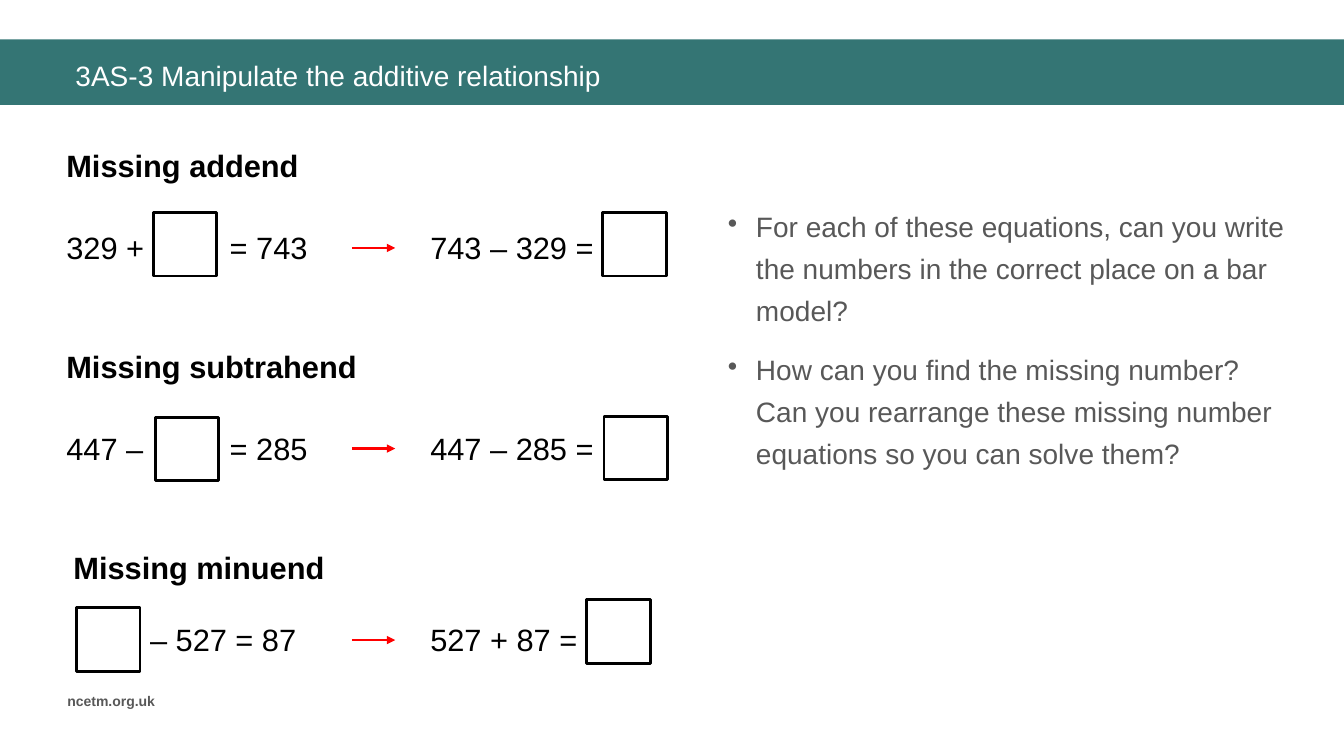
import pptx
import pptx.util
import pptx.dml.color
import pptx.enum.shapes
import pptx.enum.text
import pptx.oxml.ns
import lxml.etree

Inches = pptx.util.Inches
Pt = pptx.util.Pt
SHAPE = pptx.enum.shapes.MSO_SHAPE
LINE = pptx.enum.shapes.MSO_CONNECTOR
ANCHOR = pptx.enum.text.MSO_ANCHOR
qn = pptx.oxml.ns.qn


def color(part, code):
    """Give a fill, line or font one solid colour."""
    fill = part if hasattr(part, "solid") else part.fill
    fill.solid()
    fill.fore_color.rgb = pptx.dml.color.RGBColor.from_string(code)


def write(spot, lines, code, form, tab=None, bullet=None):
    """Add a text box at spot, one paragraph per line."""
    frame = slide.shapes.add_textbox(*map(Inches, spot)).text_frame
    frame.word_wrap = True
    for row, line in enumerate(lines):
        para = frame.paragraphs[0] if row == 0 else frame.add_paragraph()
        para.text = line
        props = para._p.get_or_add_pPr()
        if bullet:
            props.set("marL", str(Inches(0.28)))
            props.set("indent", str(Inches(-0.28)))
            lxml.etree.SubElement(props, qn("a:buChar")).set("char", bullet)
        if tab:
            stops = lxml.etree.SubElement(props, qn("a:tabLst"))
            stop = lxml.etree.SubElement(stops, qn("a:tab"))
            stop.set("pos", str(Inches(tab)))
            stop.set("algn", "l")
        for name, value in form.items():
            setattr(para.font, name, value)
        color(para.font.fill, code)
    return frame


deck = pptx.Presentation()
deck.slide_width = Inches(13.33)
deck.slide_height = Inches(7.5)
slide = deck.slides.add_slide(deck.slide_layouts[6])

BLACK, WHITE, GREY, TEAL, RED = "000000", "FFFFFF", "585858", "347574", "FF0000"
small = {"name": "Arial", "size": Pt(10), "bold": True}
body = {"name": "Arial", "size": Pt(20)}
sums = {"name": "Arial", "size": Pt(22)}
head = {**sums, "bold": True}

# Banner, title and footer
band = slide.shapes.add_shape(
    SHAPE.RECTANGLE, 0, Inches(0.39), deck.slide_width, Inches(0.65))
band.shadow.inherit = False
color(band.fill, TEAL)
band.line.fill.background()
title = write((0.65, 0.51, 12.32, 0.47),
              ["3AS-3 Manipulate the additive relationship"], WHITE, body)
title.vertical_anchor = ANCHOR.MIDDLE
write((0.57, 6.82, 1.21, 0.27), ["ncetm.org.uk"], GREY, small)

# Heading and its place, equation and its place, answer, top of the equation
tasks = [
    ("Missing addend", 0.56, 1.41, "329 +\t= 743", 0.56, "743 – 329 =", 2.22),
    ("Missing subtrahend", 0.56, 3.4, "447 –\t= 285", 0.56, "447 – 285 =", 4.21),
    ("Missing minuend", 0.63, 5.39, "– 527 = 87", 1.39, "527 + 87 =", 6.11),
]
for name, left, top, given, start, solved, base in tasks:
    write((left, top, 3.91, 0.47), [name], BLACK, head)
    write((start, base, 2.72, 0.47), [given], BLACK, sums, tab=1.62)
    write((4.17, base, 2.86, 0.47), [solved], BLACK, sums)
    mid = Inches(base + 0.24)
    arrow = slide.shapes.add_connector(
        LINE.STRAIGHT, Inches(3.49), mid, Inches(3.92), mid)
    color(arrow.line, RED)
    arrow.line.width = Pt(2)
    tip = lxml.etree.SubElement(arrow.line._get_or_add_ln(), qn("a:tailEnd"))
    tip.set("type", "triangle")
    lxml.etree.SubElement(arrow._element.spPr, qn("a:effectLst"))

# Empty boxes for the missing numbers
for left, top in [(1.52, 2.11), (5.98, 2.11), (1.54, 4.14),
                  (5.99, 4.13), (0.76, 6.03), (5.82, 5.95)]:
    gap = slide.shapes.add_shape(
        SHAPE.RECTANGLE, Inches(left), Inches(top), Inches(0.63), Inches(0.63))
    gap.shadow.inherit = False
    color(gap.fill, WHITE)
    color(gap.line, BLACK)
    gap.line.width = Pt(2)

# Questions
asks = write((7.12, 1.95, 5.8, 2.51), [
    "For each of these equations, can you write the numbers in the correct "
    "place on a bar model?",
    "How can you find the missing number? Can you rearrange these missing "
    "number equations so you can solve them?",
], GREY, body, bullet="•")
for row, para in enumerate(asks.paragraphs):
    para.line_spacing = 1.25
    para.space_before = Pt(6 if row else 0)
    para.space_after = Pt(6)

deck.save("out.pptx")
